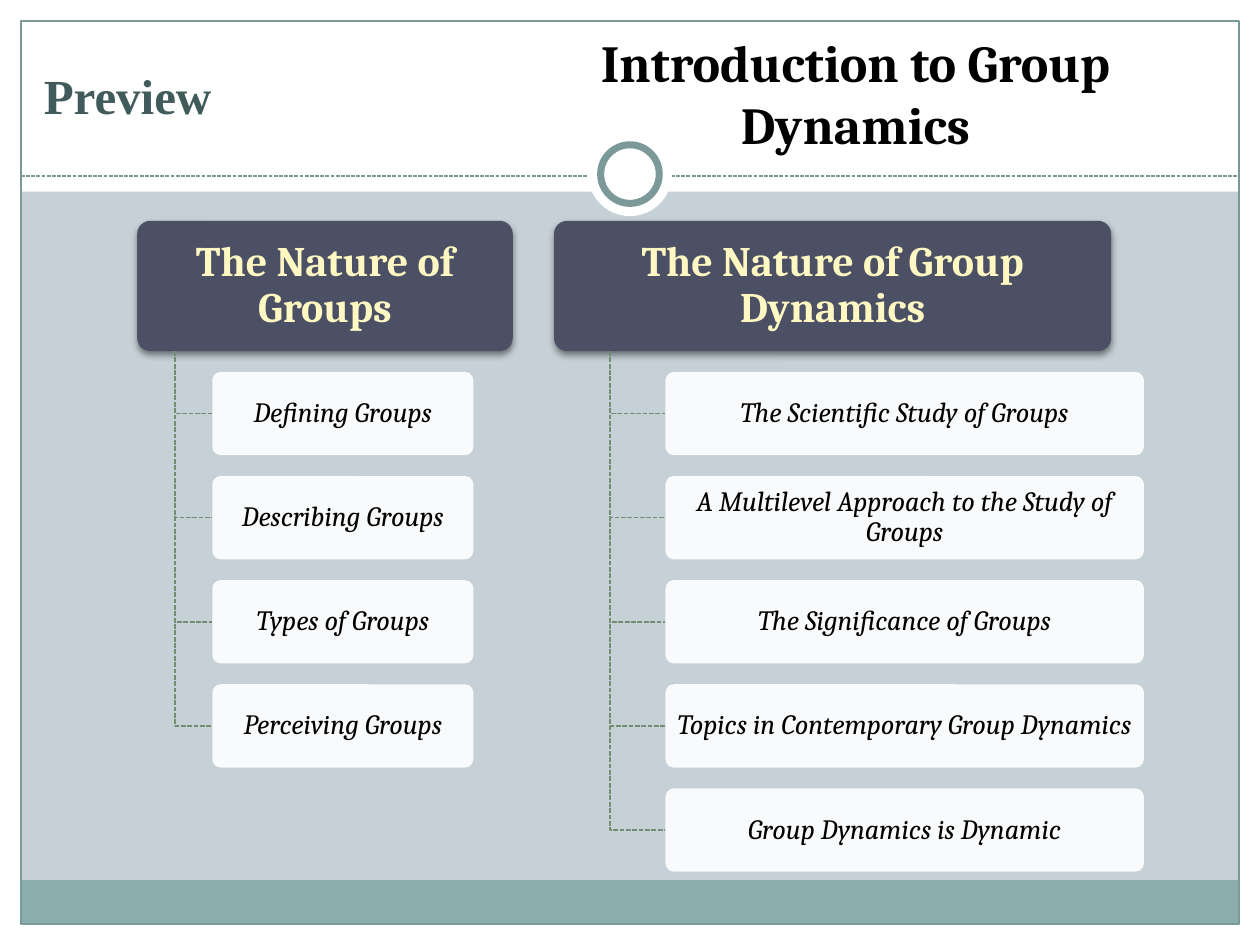
from lxml import etree
from pptx import Presentation
from pptx.dml.color import RGBColor
from pptx.enum.dml import MSO_LINE
from pptx.enum.shapes import MSO_CONNECTOR, MSO_SHAPE
from pptx.enum.text import MSO_ANCHOR, MSO_AUTO_SIZE, PP_ALIGN
from pptx.oxml.ns import qn
from pptx.util import Pt

RECTANGLE, ROUNDED, OVAL = MSO_SHAPE.RECTANGLE, MSO_SHAPE.ROUNDED_RECTANGLE, MSO_SHAPE.OVAL
DASH = MSO_LINE.SQUARE_DOT
CENTER, LEFT = PP_ALIGN.CENTER, PP_ALIGN.LEFT
MIDDLE, BOTTOM = MSO_ANCHOR.MIDDLE, MSO_ANCHOR.BOTTOM

WHITE, BLACK, TEAL = "FFFFFF", "000000", "7C999A"
SLIDE_WIDTH, SLIDE_HEIGHT, MARGIN = 720, 540, 12

FRAME = [
    (RECTANGLE, (0, 528, 720, 12), WHITE, None, 0),
    (RECTANGLE, (0, 0, 720, 109.5), WHITE, None, 0),
    (RECTANGLE, (0, 0, MARGIN, 540), WHITE, None, 0),
    (RECTANGLE, (SLIDE_WIDTH - MARGIN, 0, MARGIN, 540), WHITE, None, 0),
    (RECTANGLE, (MARGIN, 503, 696, 25), "8CADAE", None, 0),
    (RECTANGLE, (MARGIN, MARGIN, 696, 516), None, TEAL, 0.75),
]
RING = [
    (OVAL, (336, 75.5, 48, 48), WHITE, None, 0),
    (OVAL, (343.25, 82.75, 33.5, 33.5), WHITE, TEAL, 4),
]
TITLE = "Introduction to Group Dynamics"
LABEL = "Preview"
BRANCHES = [
    {
        "heading": "The Nature of Groups",
        "left": 78.4, "width": 214.6, "item_width": 149.2,
        "items": ["Defining Groups", "Describing Groups", "Types of Groups", "Perceiving Groups"],
    },
    {
        "heading": "The Nature of Group Dynamics",
        "left": 316.6, "width": 318.4, "item_width": 273.4,
        "items": [
            "The Scientific Study of Groups",
            "A Multilevel Approach to the Study of Groups",
            "The Significance of Groups",
            "Topics in Contemporary Group Dynamics",
            "Group Dynamics is Dynamic",
        ],
    },
]
HEADING_TOP, HEADING_HEIGHT = 126.2, 74.4
ITEM_HEIGHT, ITEM_GAP = 47.6, 11.9


def color(value):
    return RGBColor.from_string(value)


def points(values):
    return [Pt(value) for value in values]


def add_box(slide, kind, place, fill=None, line=None, line_width=0):
    shape = slide.shapes.add_shape(kind, *points(place))
    shape.shadow.inherit = False
    if fill:
        shape.fill.solid()
        shape.fill.fore_color.rgb = color(fill)
    else:
        shape.fill.background()
    if line:
        shape.line.color.rgb = color(line)
        shape.line.width = Pt(line_width)
    else:
        shape.line.fill.background()
    return shape


def write(shape, text, size, ink, name="Cambria", bold=False, italic=False,
          align=CENTER, anchor=MIDDLE, spacing=1.0, inset=7.2):
    frame = shape.text_frame
    frame.text = text
    frame.word_wrap = True
    frame.auto_size = MSO_AUTO_SIZE.NONE
    frame.vertical_anchor = anchor
    frame.margin_left = frame.margin_right = Pt(inset)
    frame.margin_top = frame.margin_bottom = Pt(inset / 2)
    paragraph = frame.paragraphs[0]
    paragraph.alignment = align
    paragraph.line_spacing = spacing
    font = paragraph.runs[0].font
    font.name, font.size, font.bold, font.italic = name, Pt(size), bold, italic
    font.color.rgb = color(ink)


def add_alpha(color_element, percent):
    etree.SubElement(color_element, qn("a:alpha"), val=str(percent * 1000))


def add_shadow(shape):
    effects = shape._element.spPr.find(qn("a:effectLst"))
    shadow = etree.SubElement(effects, qn("a:outerShdw"), blurRad=str(Pt(4)),
                              dist=str(Pt(2)), dir="5400000", rotWithShape="0")
    add_alpha(etree.SubElement(shadow, qn("a:srgbClr"), val=BLACK), 45)


def add_elbow(slide, left, top, right, bottom):
    builder = slide.shapes.build_freeform(Pt(left), Pt(top))
    builder.add_line_segments([points((left, bottom)), points((right, bottom))], close=False)
    elbow = builder.convert_to_shape()
    elbow.shadow.inherit = False
    elbow.fill.background()
    elbow.line.color.rgb = color("738D70")
    elbow.line.width = Pt(0.9)
    elbow.line.dash_style = DASH


def add_branch(slide, branch):
    left, width = branch["left"], branch["width"]
    heading = add_box(slide, ROUNDED, (left, HEADING_TOP, width, HEADING_HEIGHT), "4B5064")
    heading.adjustments[0] = 0.1
    add_shadow(heading)
    write(heading, branch["heading"], 24, "FFF8C2", bold=True, spacing=0.9, inset=5.8)

    trunk, item_left = left + width * 0.1, left + width * 0.2
    heading_bottom = HEADING_TOP + HEADING_HEIGHT
    for index, text in enumerate(branch["items"]):
        top = heading_bottom + ITEM_GAP + index * (ITEM_HEIGHT + ITEM_GAP)
        add_elbow(slide, trunk, heading_bottom, item_left, top + ITEM_HEIGHT / 2)
        item = add_box(slide, ROUNDED, (item_left, top, branch["item_width"], ITEM_HEIGHT), WHITE)
        item.adjustments[0] = 0.1
        add_alpha(item._element.spPr.find(qn("a:solidFill"))[0], 90)
        write(item, text, 16, BLACK, italic=True, spacing=0.9, inset=3.2)


def main():
    presentation = Presentation()
    presentation.slide_width, presentation.slide_height = Pt(SLIDE_WIDTH), Pt(SLIDE_HEIGHT)
    slide = presentation.slides.add_slide(presentation.slide_layouts[5])
    slide.background.fill.solid()
    slide.background.fill.fore_color.rgb = color("C5D1D7")

    for part in FRAME:
        add_box(slide, *part)
    divider = slide.shapes.add_connector(
        MSO_CONNECTOR.STRAIGHT, *points((MARGIN, 100.6, SLIDE_WIDTH - MARGIN, 100.6)))
    divider.line.color.rgb = color(TEAL)
    divider.line.width = Pt(0.75)
    divider.line.dash_style = DASH
    etree.SubElement(divider._element.spPr, qn("a:effectLst"))
    for part in RING:
        add_box(slide, *part)

    title = slide.shapes.title
    title.left, title.top, title.width, title.height = points((282, 32.4, 414, 60))
    write(title, TITLE, 29.7, BLACK, bold=True, anchor=BOTTOM)
    slide.shapes._spTree.append(title._element)

    for branch in BRANCHES:
        add_branch(slide, branch)

    label = slide.shapes.add_textbox(*points((18, 18, 631.4, 72)))
    write(label, LABEL, 28, "415B5C", name="Times New Roman", bold=True, align=LEFT)
    presentation.save("out.pptx")


if __name__ == "__main__":
    main()
